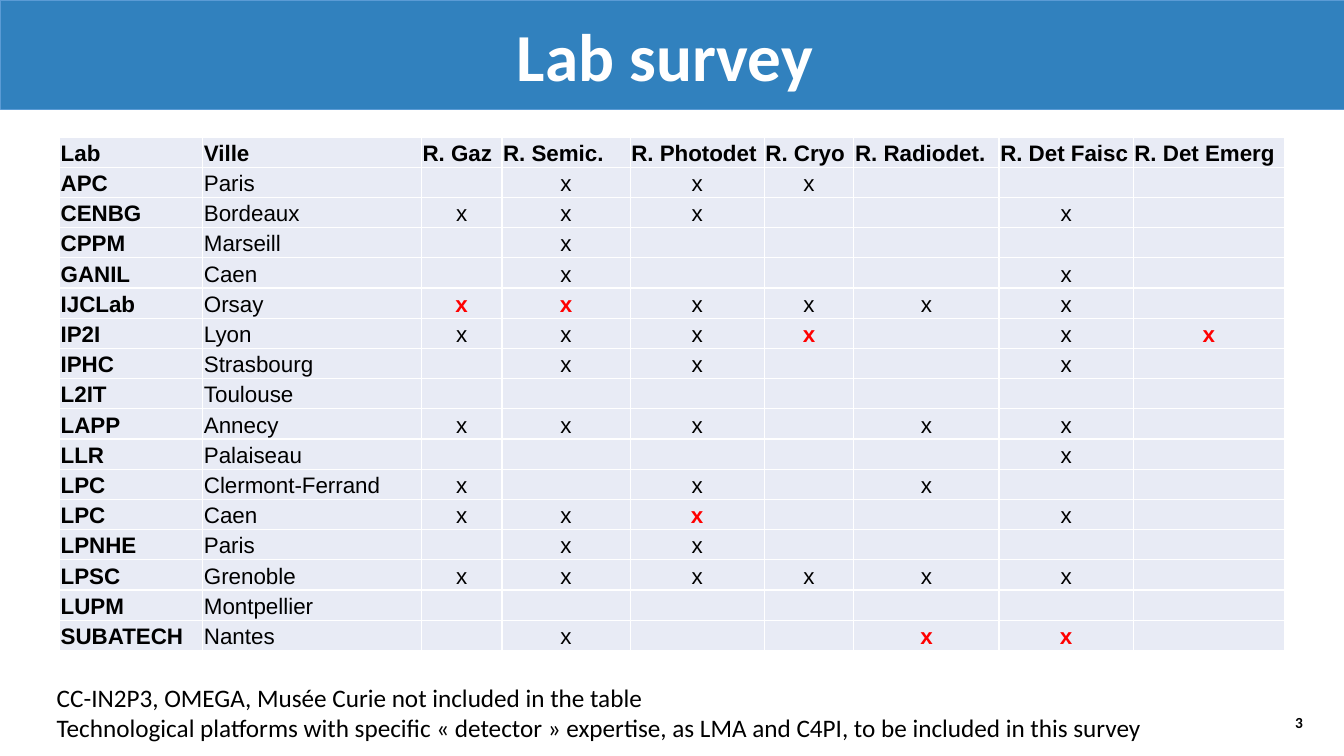
import pptx
import pptx.dml.color
import pptx.enum.shapes
import pptx.enum.text
import pptx.oxml.ns
import pptx.util
from lxml import etree

Cm, Pt = pptx.util.Cm, pptx.util.Pt
qn = pptx.oxml.ns.qn
ALIGN = pptx.enum.text.PP_ALIGN
ANCHOR = pptx.enum.text.MSO_ANCHOR

COLORS = {"band": "3181BE", "band_line": "5B9BD5", "cell": "E8EBF5",
          "white": "FFFFFF", "text": "000000", "lead": "FF0000"}

HEADERS = ["Lab", "Ville", "R. Gaz", "R. Semic.", "R. Photodet", "R. Cryo",
           "R. Radiodet.", "R. Det Faisc", "R. Det Emerg"]
COLUMN_WIDTHS = [3.61, 5.51, 2.03, 3.23, 3.38, 2.26, 3.66, 3.38, 3.81]

# One mark per R. column: x = takes part, X = shown in bold red, . = empty
LABS = [
    ("APC", "Paris", ".xxx..."),
    ("CENBG", "Bordeaux", "xxx..x."),
    ("CPPM", "Marseill", ".x....."),
    ("GANIL", "Caen", ".x...x."),
    ("IJCLab", "Orsay", "XXxxxx."),
    ("IP2I", "Lyon", "xxxX.xX"),
    ("IPHC", "Strasbourg", ".xx..x."),
    ("L2IT", "Toulouse", "......."),
    ("LAPP", "Annecy", "xxx.xx."),
    ("LLR", "Palaiseau", ".....x."),
    ("LPC", "Clermont-Ferrand", "x.x.x.."),
    ("LPC", "Caen", "xxX..x."),
    ("LPNHE", "Paris", ".xx...."),
    ("LPSC", "Grenoble", "xxxxxx."),
    ("LUPM", "Montpellier", "......."),
    ("SUBATECH", "Nantes", ".x..XX."),
]


def rgb(name):
    return pptx.dml.color.RGBColor.from_string(COLORS[name])


class SlideBuilder:
    body_font, table_font, table_size = "Calibri", "Arial", 16

    def __init__(self, slide):
        self.s = slide

    def style(self, p, font, size, color="text", bold=False, align=ALIGN.LEFT):
        p.alignment = align
        for r in p.runs:
            r.font.name, r.font.size, r.font.bold = font, Pt(size), bold
            r.font.color.rgb = rgb(color)

    def band(self, left, top, width, height):
        sp = self.s.shapes.add_shape(
            pptx.enum.shapes.MSO_SHAPE.RECTANGLE,
            Cm(left), Cm(top), Cm(width), Cm(height))
        sp.shadow.inherit = False
        sp.fill.solid()
        sp.fill.fore_color.rgb = rgb("band")
        sp.line.color.rgb = rgb("band_line")
        sp.line.width = Pt(0.5)

    def text(self, box, text, size, margin=0.13, wrap=False,
             anchor=ANCHOR.TOP, **look):
        tf = self.s.shapes.add_textbox(*map(Cm, box)).text_frame
        tf.word_wrap = wrap
        tf.vertical_anchor = anchor
        tf.margin_left = tf.margin_right = Cm(margin)
        tf.margin_top = tf.margin_bottom = Cm(margin)
        tf.text = text
        for p in tf.paragraphs:
            self.style(p, self.body_font, size, **look)

    def table(self, left, top, height, widths, row_count):
        frame = self.s.shapes.add_table(
            row_count, len(widths), Cm(left), Cm(top),
            Cm(sum(widths)), Cm(height))
        for column, width in zip(frame.table.columns, widths):
            column.width = Cm(width)
        return frame.table

    def cell(self, cell, text, **look):
        cell.margin_left = cell.margin_right = Cm(0.03)
        cell.margin_top = cell.margin_bottom = Cm(0.03)
        cell.vertical_anchor = ANCHOR.BOTTOM
        p = cell.text_frame.paragraphs[0]
        p.text = text
        self.style(p, self.table_font, self.table_size, **look)
        if not text:
            # Keeps an empty cell from stretching its row
            etree.SubElement(p._p, qn("a:endParaRPr"),
                             sz=str(self.table_size * 100))
        self.borders(cell)
        cell.fill.solid()
        cell.fill.fore_color.rgb = rgb("cell")

    def borders(self, cell):
        tc_pr = cell._tc.get_or_add_tcPr()
        for side in ("a:lnL", "a:lnR", "a:lnT", "a:lnB"):
            ln = etree.SubElement(tc_pr, qn(side), w=str(Pt(1)))
            fill = etree.SubElement(ln, qn("a:solidFill"))
            etree.SubElement(fill, qn("a:srgbClr"), val=COLORS["white"])


def main():
    prs = pptx.Presentation()
    prs.slide_width, prs.slide_height = Cm(33.87), Cm(19.05)
    builder = SlideBuilder(prs.slides.add_slide(prs.slide_layouts[6]))

    # Survey table
    table = builder.table(1.5, 3.45, 12.95, COLUMN_WIDTHS, len(LABS) + 1)
    for col, header in enumerate(HEADERS):
        builder.cell(table.cell(0, col), header, bold=True)
    for row, (lab, city, marks) in enumerate(LABS, start=1):
        builder.cell(table.cell(row, 0), lab, bold=True)
        builder.cell(table.cell(row, 1), city)
        for col, mark in enumerate(marks, start=2):
            lead = mark == "X"
            builder.cell(table.cell(row, col), mark.lower().strip("."),
                         color="lead" if lead else "text", bold=lead,
                         align=ALIGN.CENTER)

    # Title band
    builder.band(0.02, 0, 33.87, 2.75)
    builder.text((0.02, 0.25, 33.87, 2.24), "Lab survey ", 48, wrap=True,
                 anchor=ANCHOR.MIDDLE, color="white", bold=True,
                 align=ALIGN.CENTER)

    # Notes below the table
    builder.text((1.3, 17.07, 28.32, 1.8),
                 "CC-IN2P3, OMEGA, Musée Curie not included in the table\n"
                 "Technological platforms with specific « detector » expertise, "
                 "as LMA and C4PI, to be included in this survey", 18)

    # Slide number
    builder.text((32.64, 18.01, 0.36, 0.43), "3", 11, margin=0,
                 anchor=ANCHOR.BOTTOM, bold=True)

    prs.save("out.pptx")


if __name__ == "__main__":
    main()
